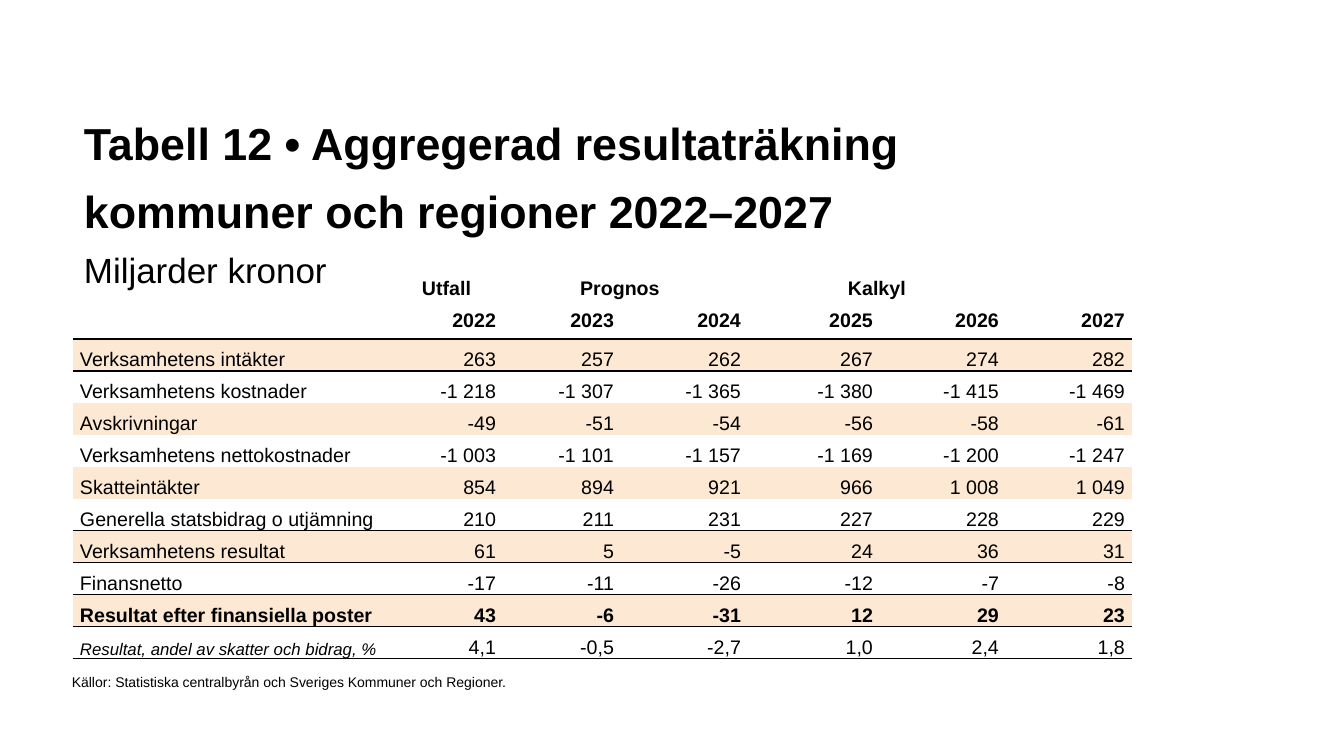
from lxml.etree import SubElement
from pptx import Presentation
from pptx.dml.color import RGBColor
from pptx.enum.text import MSO_ANCHOR, PP_ALIGN
from pptx.oxml.ns import qn
from pptx.util import Pt

PX = 9072
BLACK, PEACH = "000000", "FDE9D3"
NO_STYLE = "{2D5ABB26-0587-4C30-8999-92F81FD0307C}"
COLUMN_WIDTHS = [317, 113, 118, 127, 132, 126, 126]
ROW_HEIGHT = 32
PERIODS = [("Utfall", 1, 1, 7), ("Prognos", 2, 3, 18), ("Kalkyl", 4, 5, 7)]
YEARS = ["", "2022", "2023", "2024", "2025", "2026", "2027"]
RESULTS = [
    ["Verksamhetens intäkter", "263", "257", "262", "267", "274", "282"],
    ["Verksamhetens kostnader", "-1 218", "-1 307", "-1 365", "-1 380", "-1 415", "-1 469"],
    ["Avskrivningar", "-49", "-51", "-54", "-56", "-58", "-61"],
    ["Verksamhetens nettokostnader", "-1 003", "-1 101", "-1 157", "-1 169", "-1 200", "-1 247"],
    ["Skatteintäkter", "854", "894", "921", "966", "1 008", "1 049"],
    ["Generella statsbidrag o utjämning", "210", "211", "231", "227", "228", "229"],
    ["Verksamhetens resultat", "61", "5", "-5", "24", "36", "31"],
    ["Finansnetto", "-17", "-11", "-26", "-12", "-7", "-8"],
    ["Resultat efter finansiella poster", "43", "-6", "-31", "12", "29", "23"],
    ["Resultat, andel av skatter och bidrag, %", "4,1", "-0,5", "-2,7", "1,0", "2,4", "1,8"],
]
RULED_ROWS = {1, 7, 8, 9, 10, 11}
BOLD_ROWS = {0, 1, 10}
SHARE_ROW = 11


def apply(target, formats):
    """Set every attribute in formats on target."""
    for name, setting in formats.items():
        setattr(target, name, setting)


def color(hex_string):
    """Turn a hex string into a colour."""
    return RGBColor.from_string(hex_string)


def add_run(paragraph, wording, size, bold=False, italic=False):
    """Append black Arial wording to a paragraph."""
    run = paragraph.add_run()
    run.text = wording
    apply(run.font, {"name": "Arial", "size": Pt(size), "bold": bold, "italic": italic})
    run.font.color.rgb = color(BLACK)


def add_text_area(slide, box):
    """Add a wrapping text box and return its first paragraph."""
    frame = slide.shapes.add_textbox(*(length * PX for length in box)).text_frame
    apply(frame, {"word_wrap": True, "vertical_anchor": MSO_ANCHOR.TOP})
    return frame.paragraphs[0]


def add_heading(slide, box):
    """Place the table title and its unit."""
    heading = add_text_area(slide, box)
    apply(heading, {"line_spacing": 1.26, "space_after": Pt(4)})
    add_run(heading, "Tabell 12 • Aggregerad resultaträkning kommuner och regioner 2022–2027", 32, bold=True)
    heading.add_line_break()
    add_run(heading, "Miljarder kronor", 25)


def add_rule(cell, edge):
    """Draw a thin black line on one edge of a cell."""
    rule = SubElement(cell._tc.get_or_add_tcPr(), qn(f"a:{edge}"), w=str(Pt(1)))
    fill = SubElement(rule, qn("a:solidFill"))
    SubElement(fill, qn("a:srgbClr"), val=BLACK)


def fill_cell(cell, wording, row, column):
    """Format one table cell by its row and column."""
    apply(cell, {
        "margin_left": 7 * PX, "margin_right": 7 * PX, "margin_top": 0, "margin_bottom": 0,
        "vertical_anchor": MSO_ANCHOR.MIDDLE if row < 2 else MSO_ANCHOR.BOTTOM,
    })
    if row - 1 in RULED_ROWS:
        add_rule(cell, "lnT")
    if row in RULED_ROWS:
        add_rule(cell, "lnB")
    if row >= 2 and row % 2 == 0:
        cell.fill.solid()
        cell.fill.fore_color.rgb = color(PEACH)
    else:
        cell.fill.background()
    paragraph = cell.text_frame.paragraphs[0]
    alignment = PP_ALIGN.CENTER if row == 0 else PP_ALIGN.RIGHT if column else PP_ALIGN.LEFT
    apply(paragraph, {"alignment": alignment, "line_spacing": Pt(13), "space_after": Pt(1)})
    if wording:
        share_label = row == SHARE_ROW and column == 0
        add_run(paragraph, wording, 12 if share_label else 14, row in BOLD_ROWS, share_label)


def add_income_statement(slide, left, top):
    """Place the income statement with its periods and years."""
    periods = [""] * len(YEARS)
    for period, first, _, _ in PERIODS:
        periods[first] = period
    rows = [periods, YEARS, *RESULTS]
    box = (left, top, sum(COLUMN_WIDTHS), ROW_HEIGHT * len(rows))
    table = slide.shapes.add_table(len(rows), len(YEARS), *(length * PX for length in box)).table
    apply(table, {"first_row": False, "horz_banding": False})
    table._tbl.tblPr.find(qn("a:tableStyleId")).text = NO_STYLE
    for column, width in zip(table.columns, COLUMN_WIDTHS):
        column.width = width * PX
    for row, entries in enumerate(rows):
        table.rows[row].height = ROW_HEIGHT * PX
        for column, wording in enumerate(entries):
            fill_cell(table.cell(row, column), wording, row, column)
    for _, first, last, right_margin in PERIODS:
        table.cell(0, first).margin_right = right_margin * PX
        if last > first:
            table.cell(0, first).merge(table.cell(0, last))


def add_sources(slide, box):
    """Place the line that names the sources."""
    add_run(add_text_area(slide, box), "Källor: Statistiska centralbyrån och Sveriges Kommuner och Regioner.", 10)


def main():
    """Build and save the slide."""
    presentation = Presentation()
    apply(presentation, {"slide_width": 1344 * PX, "slide_height": 756 * PX})
    slide = presentation.slides.add_slide(presentation.slide_layouts[6])
    add_heading(slide, (74, 97, 1059, 136))
    add_income_statement(slide, 73, 275)
    add_sources(slide, (62, 669, 672, 27))
    presentation.save("out.pptx")


if __name__ == "__main__":
    main()
